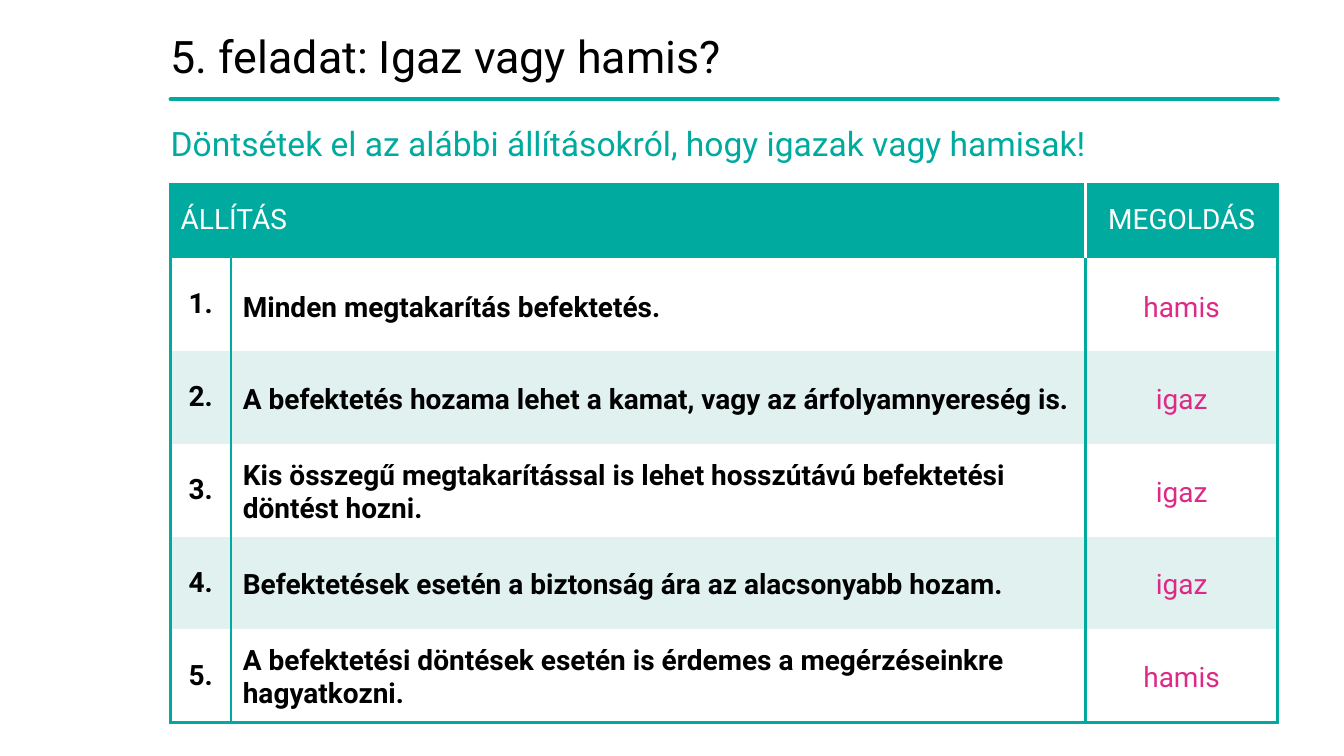
import pptx
import pptx.util
import pptx.dml.color
import pptx.enum.text
import pptx.enum.shapes
import pptx.oxml.ns
import lxml.etree

Cm, Pt = pptx.util.Cm, pptx.util.Pt
ALIGN = pptx.enum.text.PP_ALIGN
ANCHOR = pptx.enum.text.MSO_ANCHOR
AUTO = pptx.enum.text.MSO_AUTO_SIZE

TITLE = "5. feladat: Igaz vagy hamis?"
TASK = "Döntsétek el az alábbi állításokról, hogy igazak vagy hamisak!"
HEADS = ("ÁLLÍTÁS", "MEGOLDÁS")
ITEMS = [
    ("Minden megtakarítás befektetés.", "hamis"),
    ("A befektetés hozama lehet a kamat, vagy az árfolyamnyereség is.", "igaz"),
    ("Kis összegű megtakarítással is lehet hosszútávú befektetési\ndöntést hozni.", "igaz"),
    ("Befektetések esetén a biztonság ára az alacsonyabb hozam.", "igaz"),
    ("A befektetési döntések esetén is érdemes a megérzéseinkre\nhagyatkozni.", "hamis"),
]
COLORS = {"teal": "00AA9F", "pale": "E0F1EF", "white": "FFFFFF",
          "black": "000000", "pink": "DE2A86"}
FONT = "Roboto"
LEFT, WIDE = 4.3, 27.9
COLS = (1.52, 21.54, 4.84)
TOP, HEAD, ROW = 4.6, 1.9, 2.34
BOX_TOP, STEP, BOX = 6.55, 2.33, 2.32


def tint(name):
    return pptx.dml.color.RGBColor.from_string(COLORS[name])


def write(frame, text, size, color, bold=False, align=ALIGN.LEFT, space=None):
    para = frame.paragraphs[0]
    para.alignment = align
    para.space_before = Pt(0)
    if space:
        para.line_spacing = space
    for i, line in enumerate(text.split("\n")):
        if i:
            para.add_line_break()
        run = para.add_run()
        run.text = line
        font = run.font
        font.name, font.size, font.bold = FONT, Pt(size), bold
        font.color.rgb = tint(color)


def shape_up(frame, anchor, inset=0):
    frame.word_wrap = True
    frame.auto_size = AUTO.NONE
    frame.vertical_anchor = anchor
    frame.margin_left = Cm(inset)
    frame.margin_right = frame.margin_top = frame.margin_bottom = 0


def place(shape, x, y, w, h):
    shape.left, shape.top, shape.width, shape.height = Cm(x), Cm(y), Cm(w), Cm(h)


def edge(cell, sides):
    props = cell._tc.get_or_add_tcPr()
    for i, side in enumerate("LRTB"):
        color = sides.get(side)
        line = lxml.etree.Element(pptx.oxml.ns.qn("a:ln" + side))
        line.set("w", str(Pt(2.25) if color else 0))
        kind = "a:solidFill" if color else "a:noFill"
        fill = lxml.etree.SubElement(line, pptx.oxml.ns.qn(kind))
        if color:
            rgb = lxml.etree.SubElement(fill, pptx.oxml.ns.qn("a:srgbClr"))
            rgb.set("val", COLORS[color])
        props.insert(i, line)


def add_rule(slide):
    rule = slide.shapes.add_connector(pptx.enum.shapes.MSO_CONNECTOR.STRAIGHT,
                                      Cm(LEFT), Cm(2.5), Cm(LEFT + WIDE), Cm(2.5))
    rule.line.color.rgb = tint("teal")
    rule.line.width = Pt(3)
    rule.line._get_or_add_ln().set("cap", "rnd")
    props = rule._element.spPr
    lxml.etree.SubElement(props, pptx.oxml.ns.qn("a:effectLst"))


def add_grid(slide):
    count = len(ITEMS)
    grid = slide.shapes.add_table(count + 1, 3, Cm(LEFT), Cm(TOP), Cm(WIDE),
                                  Cm(HEAD + count * ROW)).table
    grid.horz_banding = False
    for col, width in zip(grid.columns, COLS):
        col.width = Cm(width)
    for r, row in enumerate(grid.rows):
        row.height = Cm(ROW if r else HEAD)
        for c, cell in enumerate(row.cells):
            cell.vertical_anchor = ANCHOR.MIDDLE
            cell.fill.solid()
            shade = "teal" if r == 0 else "white" if r % 2 else "pale"
            cell.fill.fore_color.rgb = tint(shade)
            sides = {"L": "teal", "R": "teal"}
            if r == 0 and c == 1:
                sides["R"] = "white"
            if r == 0 and c == 0:
                sides["R"] = "white"
            if r == 0 and c == 2:
                sides["L"] = "white"
            if r == count:
                sides["B"] = "teal"
            edge(cell, sides)
        if r:
            write(row.cells[0].text_frame, f"{r}.", 20, "black", True, ALIGN.CENTER)
    grid.cell(0, 0).merge(grid.cell(0, 1))
    write(grid.cell(0, 0).text_frame, HEADS[0], 20, "white")
    write(grid.cell(0, 2).text_frame, HEADS[1], 20, "white", align=ALIGN.CENTER)


def add_box(slide, col, row, text, color, bold, align, inset):
    box = slide.shapes.add_textbox(0, 0, 0, 0)
    place(box, LEFT + sum(COLS[:col]), BOX_TOP + row * STEP, COLS[col], BOX)
    shape_up(box.text_frame, ANCHOR.MIDDLE, inset)
    write(box.text_frame, text, 20, color, bold, align)


def main():
    deck = pptx.Presentation()
    deck.slide_width, deck.slide_height = Cm(33.87), Cm(19.05)
    slide = deck.slides.add_slide(deck.slide_layouts[0])
    add_rule(slide)

    title, task = slide.placeholders
    place(title, LEFT, 0.84, WIDE, 1.3)
    shape_up(title.text_frame, ANCHOR.MIDDLE)
    write(title.text_frame, TITLE, 32, "black", space=0.9)
    place(task, LEFT, 3.2, WIDE, 0.92)
    shape_up(task.text_frame, ANCHOR.TOP)
    write(task.text_frame, TASK, 24, "teal", space=0.9)

    add_grid(slide)
    for i, (claim, answer) in enumerate(ITEMS):
        add_box(slide, 2, i, answer, "pink", False, ALIGN.CENTER, 0)
        add_box(slide, 1, i, claim, "black", True, ALIGN.LEFT, 0.3)
    deck.save("out.pptx")


if __name__ == "__main__":
    main()
